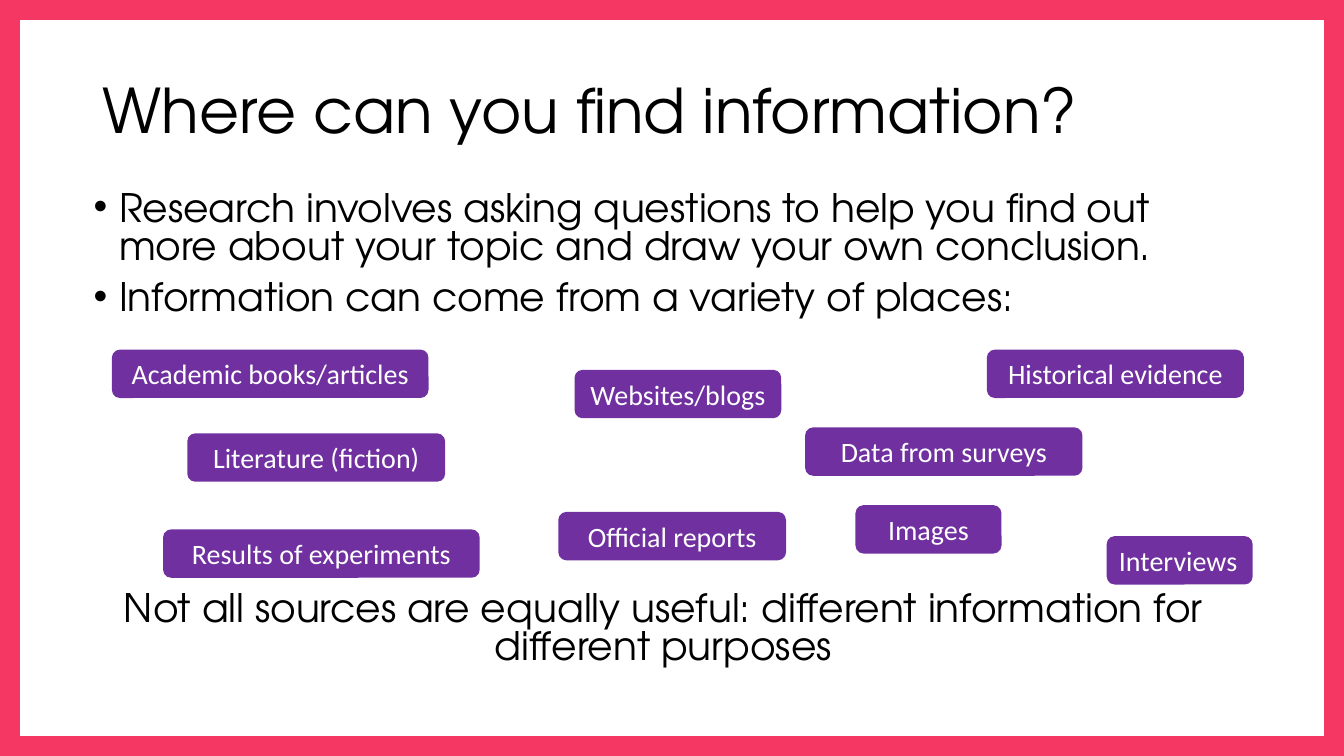
from lxml.etree import SubElement
from pptx import Presentation
from pptx.dml.color import RGBColor as RGB
from pptx.enum.shapes import MSO_SHAPE as Shape
from pptx.enum.text import MSO_ANCHOR as Anchor, PP_ALIGN as Align
from pptx.oxml.ns import qn
from pptx.util import Cm, Pt

HUES = {"frame": "F53764", "chip": "7030A0", "ink": "000000", "light": "FFFFFF"}
HEAD, BODY = "TeX Gyre Adventor", "Calibri"
WIDE, HIGH, EDGE = 33.87, 19.05, 0.5
CHIP = 1.22
DENT = 0.64

TITLE = "Where can you find information?"
POINTS = [
    "Research involves asking questions to help you find out more about your topic and draw your own conclusion.",
    "Information can come from a variety of places:",
]
CLOSE = "Not all sources are equally useful: different information for different purposes"
CHIPS = [
    ("Academic books/articles", 2.82, 8.81, 7.98, Align.CENTER),
    ("Websites/blogs", 14.48, 9.32, 5.21, Align.CENTER),
    ("Historical evidence", 24.87, 8.81, 6.48, Align.CENTER),
    ("Literature (fiction)", 4.72, 10.92, 6.5, Align.CENTER),
    ("Official reports", 14.07, 12.9, 5.74, Align.CENTER),
    ("Interviews", 27.89, 13.51, 3.68, Align.LEFT),
    ("Results of experiments", 4.11, 13.34, 7.98, Align.CENTER),
    ("Data from surveys", 20.29, 10.77, 6.99, Align.CENTER),
    ("Images", 21.56, 12.73, 3.68, Align.CENTER),
]


def block(slide, kind, hue, x, y, w, h):
    shape = slide.shapes.add_shape(kind, Cm(x), Cm(y), Cm(w), Cm(h))
    shape.shadow.inherit = False
    shape.fill.solid()
    shape.fill.fore_color.rgb = RGB.from_string(HUES[hue])
    shape.line.fill.background()
    return shape


def style(para, size, face, hue, align=Align.LEFT):
    para.alignment = align
    font = para.font
    font.size, font.name = Pt(size), face
    font.color.rgb = RGB.from_string(HUES[hue])


def bullet(para):
    props = para._p.get_or_add_pPr()
    props.set("marL", str(Cm(DENT)))
    props.set("indent", str(-Cm(DENT)))
    SubElement(props, qn("a:buFont")).set("typeface", "Arial")
    SubElement(props, qn("a:buChar")).set("char", "•")


def words(slide, lines, x, y, w, h, size, pitch, align=Align.LEFT, dots=False):
    frame = slide.shapes.add_textbox(Cm(x), Cm(y), Cm(w), Cm(h)).text_frame
    frame.word_wrap = True
    for i, line in enumerate(lines):
        para = frame.add_paragraph() if i else frame.paragraphs[0]
        para.text = line
        if dots:
            bullet(para)
        para.line_spacing = pitch
        if i:
            para.space_before = Pt(10)
        style(para, size, HEAD, "ink", align)
    return frame


def main():
    deck = Presentation()
    deck.slide_width, deck.slide_height = Cm(WIDE), Cm(HIGH)
    slide = deck.slides.add_slide(deck.slide_layouts[6])

    for x in (0, WIDE - EDGE):
        block(slide, Shape.RECTANGLE, "frame", x, 0, EDGE, HIGH)
    for y in (0, HIGH - EDGE):
        block(slide, Shape.RECTANGLE, "frame", 0, y, WIDE, EDGE)

    title = words(slide, [TITLE], 2.34, 1.02, 25.4, 3.68, 44, 0.9)
    title.vertical_anchor = Anchor.MIDDLE
    words(slide, POINTS, 2.11, 4.72, 29.21, 3.8, 28, 0.8, dots=True)
    words(slide, [CLOSE], 2.11, 14.81, 29.21, 2.4, 28, 0.8, Align.CENTER)

    for name, x, y, w, align in CHIPS:
        chip = block(slide, Shape.ROUNDED_RECTANGLE, "chip", x, y, w, CHIP)
        frame = chip.text_frame
        frame.word_wrap = True
        frame.vertical_anchor = Anchor.MIDDLE
        frame.text = name
        style(frame.paragraphs[0], 20, BODY, "light", align)

    deck.save("out.pptx")


if __name__ == "__main__":
    main()
